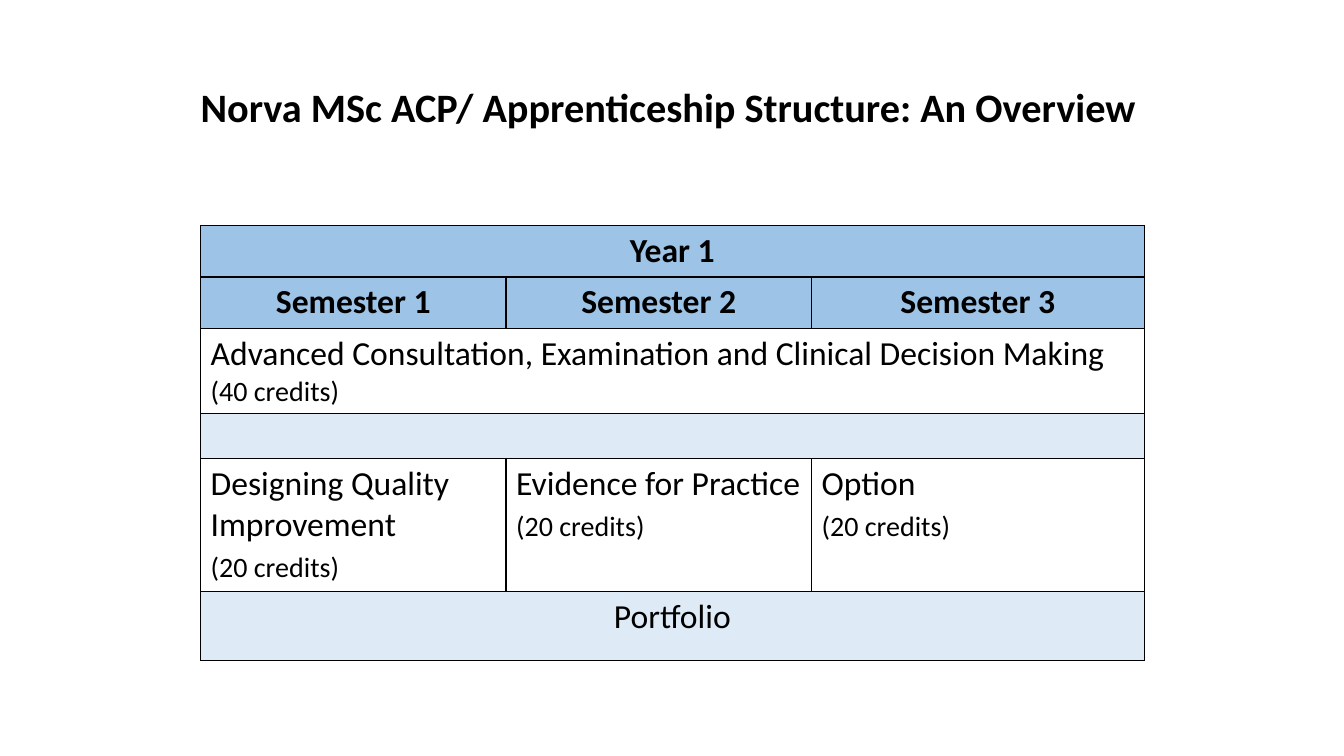
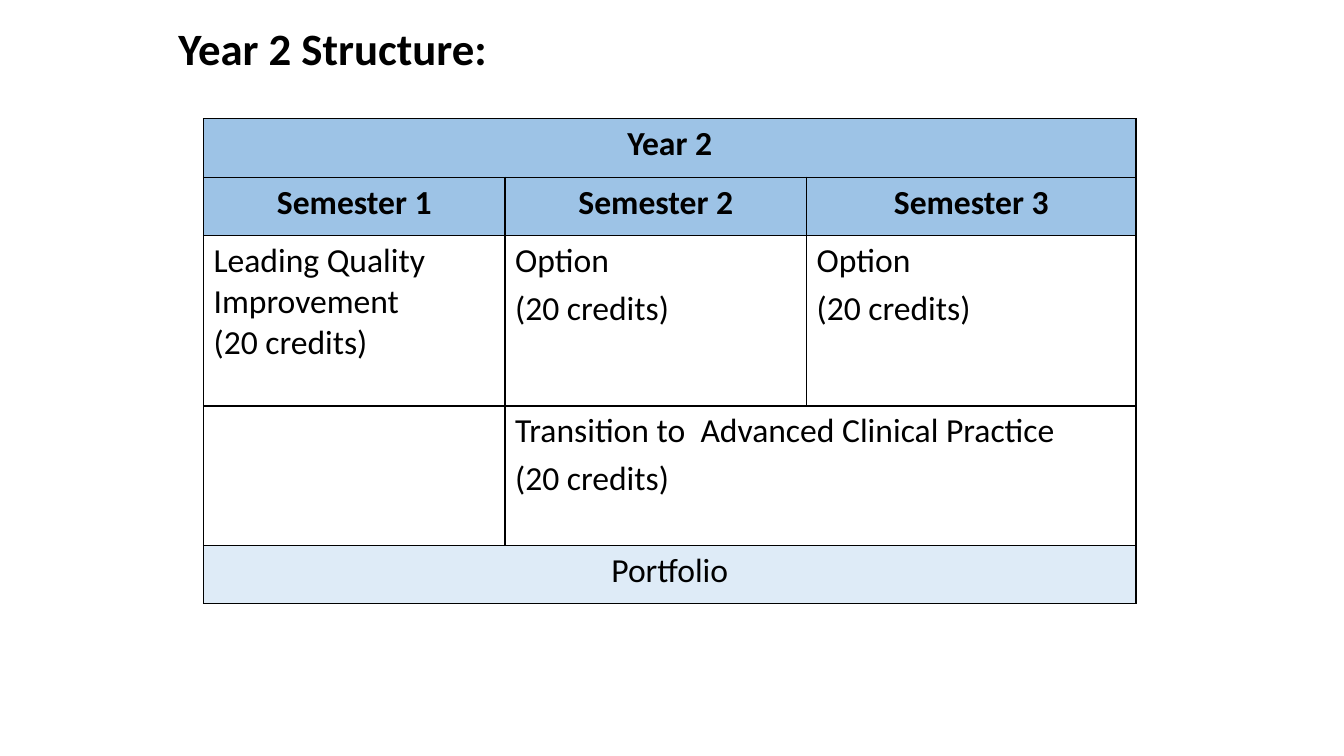
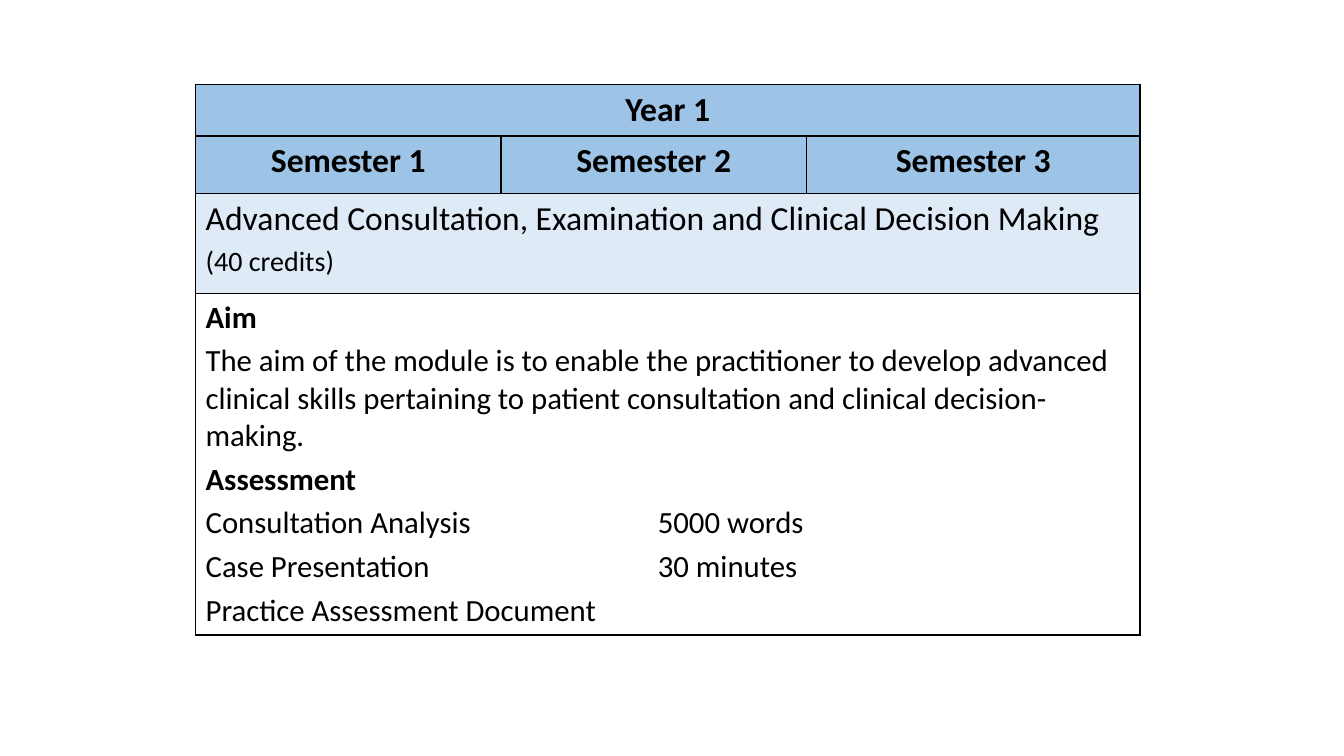
from dataclasses import dataclass

from lxml.etree import SubElement
from pptx import Presentation
from pptx.dml.color import RGBColor
from pptx.enum.text import MSO_ANCHOR, MSO_AUTO_SIZE, PP_ALIGN as Align
from pptx.oxml.ns import qn
from pptx.util import Pt

COLORS = {"ink": "000000", "header": "9DC3E6", "band": "DEEBF7", "plain": "FFFFFF"}
FONT = "Calibri"
TITLE_ONLY, BLANK = 5, 6
BORDER_WIDTH = 1
SPACE_BEFORE = 0.2  # share of the text size
TAB_STOP = 323


@dataclass
class Entry:
    """A table cell: each paragraph is a list of (text, size, bold) spans."""
    paras: list
    fill: str = "plain"
    columns: int = 1
    align: Align = Align.LEFT


def line(text, size=24, bold=False):
    return [(text, size, bold)]


def heading(text, columns=1):
    return Entry([line(text, bold=True)], "header", columns, Align.CENTER)


def module(name, credits, size=20, **options):
    return Entry([line(name), line(f"({credits} credits)", size)], **options)


def portfolio():
    return Entry([line("Portfolio")], "band", 3, Align.CENTER)


def header_rows(year):
    return [[heading(f"Year {year}", 3)],
            [heading(f"Semester {number}") for number in (1, 2, 3)]]


def add_span(para, text, size, bold):
    span = para.add_run()
    span.text = text
    span.font.name = FONT
    span.font.size = Pt(size)
    span.font.bold = bold
    span.font.color.rgb = RGBColor.from_string(COLORS["ink"])


def add_tab_stop(para):
    tabs = SubElement(para._p.get_or_add_pPr(), qn("a:tabLst"))
    SubElement(tabs, qn("a:tab"), pos=str(Pt(TAB_STOP)), algn="l")


def set_title(page, text, size, left, top):
    title = page.shapes.title
    title.left, title.top, title.width, title.height = Pt(left), Pt(top), Pt(720), Pt(67.7)
    frame = title.text_frame
    frame.word_wrap = True
    frame.auto_size = MSO_AUTO_SIZE.NONE
    frame.vertical_anchor = MSO_ANCHOR.MIDDLE
    para = frame.paragraphs[0]
    para.alignment = Align.LEFT
    para.line_spacing = 0.9
    add_span(para, text, size, True)


def add_borders(cell):
    properties = cell._tc.get_or_add_tcPr()
    for side in ("lnL", "lnR", "lnT", "lnB"):
        border = SubElement(properties, qn(f"a:{side}"), w=str(Pt(BORDER_WIDTH)))
        fill = SubElement(border, qn("a:solidFill"))
        SubElement(fill, qn("a:srgbClr"), val=COLORS["ink"])


def style_cell(cell, fill):
    add_borders(cell)
    cell.fill.solid()
    cell.fill.fore_color.rgb = RGBColor.from_string(COLORS[fill])


def write_cell(cell, entry):
    frame = cell.text_frame
    for index, spans in enumerate(entry.paras):
        para = frame.add_paragraph() if index else frame.paragraphs[0]
        para.alignment = entry.align
        para.space_before = Pt(round(spans[0][1] * SPACE_BEFORE, 2))
        for text, size, bold in spans:
            if text == "\n":
                para.add_line_break()
                continue
            if "\t" in text:
                add_tab_stop(para)
            add_span(para, text, size, bold)


def add_grid(page, left, top, widths, heights, rows):
    frame = page.shapes.add_table(len(heights), len(widths), Pt(left), Pt(top),
                                  Pt(sum(widths)), Pt(sum(heights)))
    table = frame.table
    table.first_row = table.horz_banding = False
    for column, width in zip(table.columns, widths):
        column.width = Pt(width)
    for row, height in zip(table.rows, heights):
        row.height = Pt(height)
    for row_index, entries in enumerate(rows):
        start = 0
        for entry in entries:
            end = start + entry.columns
            cell = table.cell(row_index, start)
            for column_index in range(start, end):
                style_cell(table.cell(row_index, column_index), entry.fill)
            if entry.columns > 1:
                cell.merge(table.cell(row_index, end - 1))
            write_cell(cell, entry)
            start = end


def build_overview(page):
    set_title(page, "Norva MSc ACP/ Apprenticeship Structure: An Overview", 28.8, 136.1, 44.6)
    consultation = [("Advanced Consultation, Examination and Clinical Decision Making ", 24, False),
                    ("(40 credits)", 20, False)]
    rows = header_rows(1) + [
        [Entry([consultation], columns=3)],
        [Entry([], "band", 3)],
        [module("Designing Quality Improvement", 20),
         module("Evidence for Practice", 20),
         module("Option", 20)],
        [portfolio()],
    ]
    add_grid(page, 143.3, 161, [218.2, 218.2, 237.6], [36.8, 36.8, 60.9, 32, 95, 49], rows)


def build_second_year(page):
    set_title(page, "Year 2 Structure:", 32, 120.2, 2.2)
    leading = line("Leading Quality Improvement") + line("\n") + line("(20 credits)")
    rows = header_rows(2) + [
        [Entry([leading])] + [module("Option", 20, 24) for _ in range(2)],
        [Entry([]), module("Transition to  Advanced Clinical Practice", 20, 24, columns=2)],
        [portfolio()],
    ]
    add_grid(page, 145.4, 84.8, [215.4, 215.4, 235.3], [41.8, 41.8, 121.6, 99.5, 41.8], rows)


def build_module_detail(page):
    details = [
        line("Aim", 22, True),
        line("The aim of the module is to enable the practitioner to develop advanced "
             "clinical skills pertaining to patient consultation and clinical "
             "decision-making.", 22),
        line("Assessment", 22, True),
        line("Consultation Analysis\t5000 words", 22),
        line("Case Presentation\t30 minutes", 22),
        line("Practice Assessment Document", 22),
    ]
    rows = header_rows(1) + [
        [module("Advanced Consultation, Examination and Clinical Decision Making", 40,
                fill="band", columns=3)],
        [Entry(details, columns=3)],
    ]
    add_grid(page, 139.7, 60.3, [218.2, 218.2, 238.3], [36.8, 41, 71.8, 243.7], rows)


def main():
    deck = Presentation()
    deck.slide_width, deck.slide_height = Pt(960), Pt(540)
    for build, layout in ((build_overview, TITLE_ONLY),
                          (build_second_year, TITLE_ONLY),
                          (build_module_detail, BLANK)):
        build(deck.slides.add_slide(deck.slide_layouts[layout]))
    deck.save("out.pptx")


if __name__ == "__main__":
    main()
